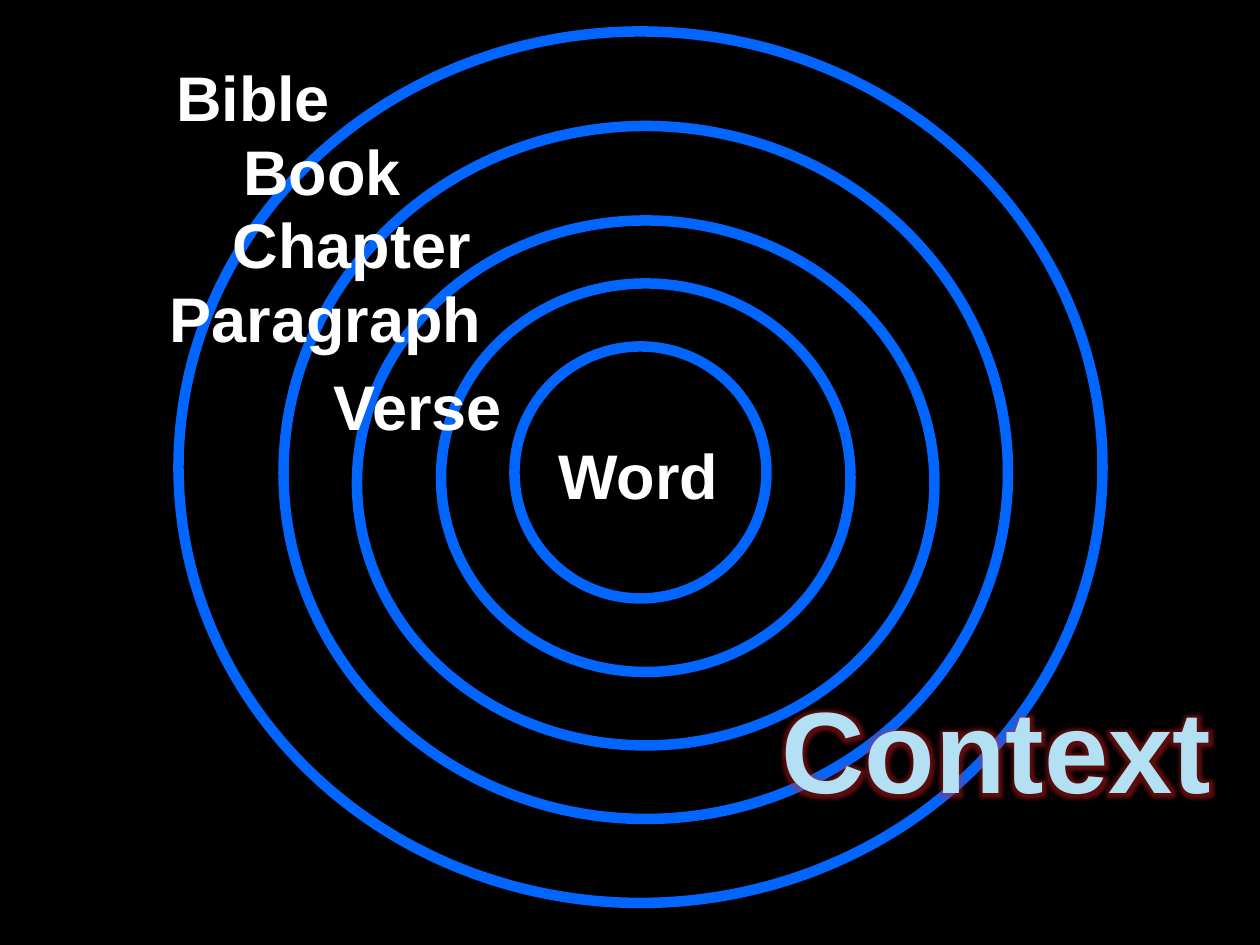
from dataclasses import dataclass

from lxml import etree
from pptx import Presentation
from pptx import util as u
from pptx.dml.color import RGBColor
from pptx.enum import shapes, text
from pptx.oxml.ns import qn


@dataclass(frozen=True)
class Theme:
    font: str = "Arial"
    background: RGBColor = RGBColor(0x00, 0x00, 0x00)
    ring: RGBColor = RGBColor(0x00, 0x66, 0xFF)
    label: RGBColor = RGBColor(0xFF, 0xFF, 0xFF)
    title: RGBColor = RGBColor(0xB3, 0xE1, 0xF3)
    glow: str = "E62020"
    ring_width: int = 6
    label_size: int = 36
    title_size: int = 66


theme = Theme()


def add_run(p, words, size, color):
    r = p.add_run()
    r.text = words
    r.font.name = theme.font
    r.font.size = u.Pt(size)
    r.font.bold = True
    r.font.color.rgb = color
    return r


# Slide
prs = Presentation()
prs.slide_width, prs.slide_height = u.Pt(720), u.Pt(540)
s = prs.slides.add_slide(prs.slide_layouts[5])
s.background.fill.solid()
s.background.fill.fore_color.rgb = theme.background

# Rings, from the outside in: left, top, width, height
rings = [
    (102, 18, 528, 498),
    (162, 72, 414, 396),
    (204, 126, 330, 300),
    (252, 162, 234, 222),
    (294, 198, 144, 144),
]
for box in rings:
    sp = s.shapes.add_shape(shapes.MSO_SHAPE.OVAL, *map(u.Pt, box))
    sp.shadow.inherit = False
    sp.fill.background()
    sp.line.color.rgb = theme.ring
    sp.line.width = u.Pt(theme.ring_width)

# Ring labels: words, left, top, width
labels = [
    ("Bible", 93.6, 30, 216),
    ("Book", 132, 72, 162),
    ("Chapter", 126, 114, 198),
    ("Paragraph", 90, 156, 240),
    ("Verse", 183.6, 206.4, 126),
    ("Word", 312, 246, 114),
]
for words, left, top, width in labels:
    sp = s.shapes.add_textbox(u.Pt(left), u.Pt(top), u.Pt(width), u.Pt(51))
    tf = sp.text_frame
    tf.word_wrap = True
    tf.auto_size = text.MSO_AUTO_SIZE.SHAPE_TO_FIT_TEXT
    add_run(tf.paragraphs[0], words, theme.label_size, theme.label)

# Title, brought in front of the rings
title = s.shapes.title
s.shapes._spTree.append(title._element)
title.left, title.top = u.Pt(438), u.Pt(384)
title.width, title.height = u.Pt(262.8), u.Pt(87)
tf = title.text_frame
tf.word_wrap = False
tf.auto_size = text.MSO_AUTO_SIZE.SHAPE_TO_FIT_TEXT
tf.vertical_anchor = text.MSO_ANCHOR.TOP
p = tf.paragraphs[0]
p.alignment = text.PP_ALIGN.CENTER
r = add_run(p, "Context", theme.title_size, theme.title)

# Glow around the title's letters
effects = etree.Element(qn("a:effectLst"))
glow = etree.SubElement(effects, qn("a:glow"), rad=str(u.Pt(8)))
color = etree.SubElement(glow, qn("a:srgbClr"), val=theme.glow)
etree.SubElement(color, qn("a:alpha"), val="40000")
r.font._element.find(qn("a:solidFill")).addnext(effects)

prs.save("out.pptx")
